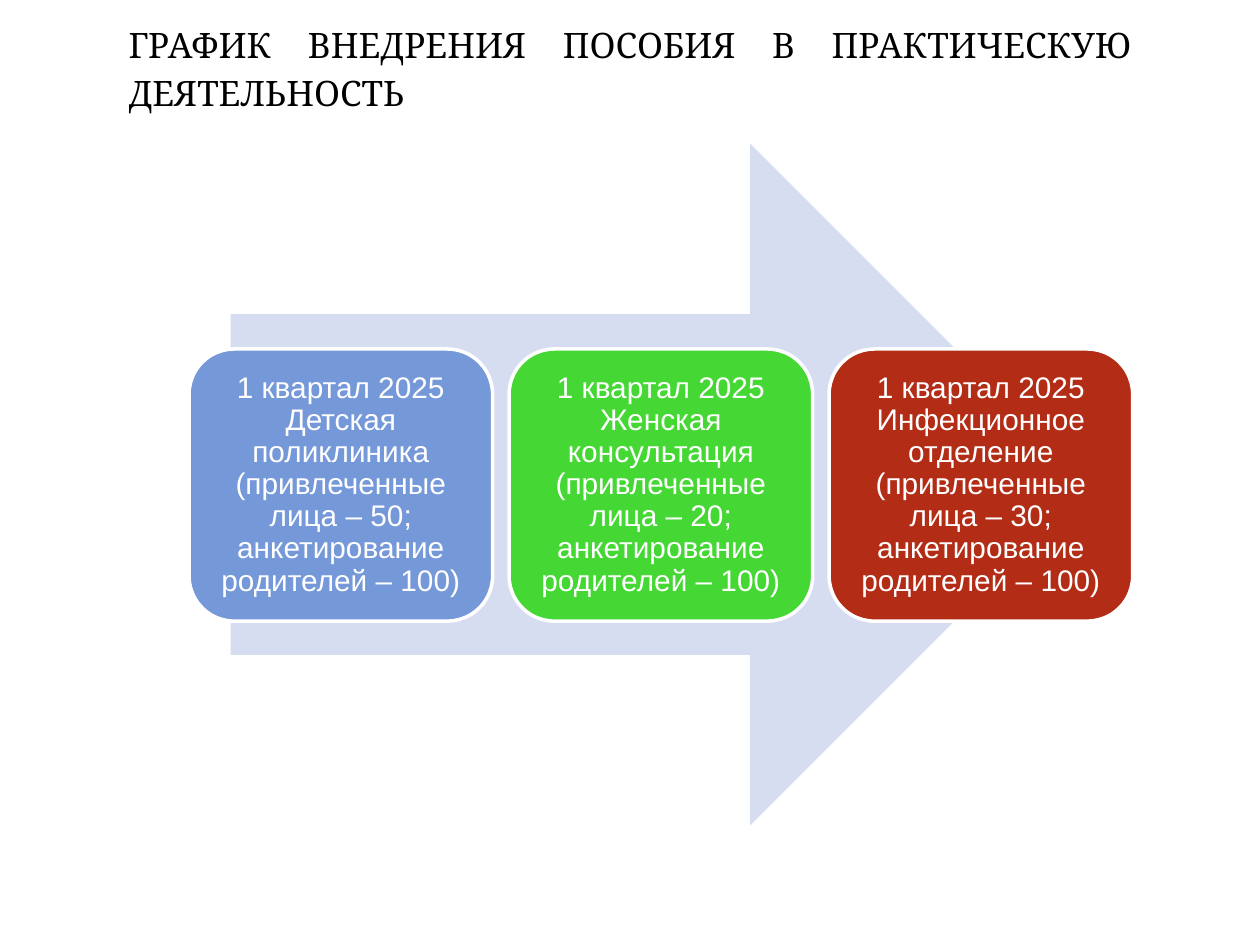
from dataclasses import dataclass

from pptx import Presentation
from pptx.dml.color import RGBColor
from pptx.enum.shapes import MSO_SHAPE as Geom
from pptx.enum.text import MSO_ANCHOR as Anchor, MSO_AUTO_SIZE as Fit, PP_ALIGN as Align
from pptx.shapes.autoshape import Shape
from pptx.slide import Slide
from pptx.text.text import TextFrame
from pptx.util import Pt

LEFT, TOP, WIDTH, HEIGHT = 108, 199.44, 173.52, 155.52
STEP = 182.88


@dataclass
class Stage:
    place: str
    people: int
    fill: str


STAGES = [
    Stage("Детская поликлиника", 50, "7598D9"),
    Stage("Женская консультация", 20, "45D834"),
    Stage("Инфекционное отделение", 30, "B32C16"),
]


def color(code: str) -> RGBColor:
    return RGBColor.from_string(code)


def write(frame: TextFrame, text: str, font: str, size: float, code: str,
          align: Align, space: float) -> None:
    frame.word_wrap = True
    frame.auto_size = Fit.NONE
    para = frame.paragraphs[0]
    para.alignment = align
    para.line_spacing = space
    run = para.add_run()
    run.text = text
    run.font.name = font
    run.font.size = Pt(size)
    run.font.color.rgb = color(code)


def add_title(slide: Slide, text: str) -> None:
    title = slide.shapes.title
    title.left, title.top = Pt(66.24), Pt(0)
    title.width, title.height = Pt(587.52), Pt(68.4)
    frame = title.text_frame
    frame.vertical_anchor = Anchor.BOTTOM
    write(frame, text, "Cambria", 20, "000000", Align.JUSTIFY, 1.15)
    frame.paragraphs[0].space_after = Pt(10)


def add_form(slide: Slide, geom: Geom, left: float, top: float,
             width: float, height: float, fill: str) -> Shape:
    form = slide.shapes.add_shape(geom, Pt(left), Pt(top), Pt(width), Pt(height))
    form.shadow.inherit = False
    form.fill.solid()
    form.fill.fore_color.rgb = color(fill)
    form.line.fill.background()
    return form


def add_stage(slide: Slide, index: int, stage: Stage) -> None:
    card = add_form(slide, Geom.ROUNDED_RECTANGLE, LEFT + index * STEP, TOP,
                    WIDTH, HEIGHT, stage.fill)
    card.line.color.rgb = color("FFFFFF")
    card.line.width = Pt(2)
    frame = card.text_frame
    frame.vertical_anchor = Anchor.MIDDLE
    frame.margin_left = frame.margin_right = Pt(5)
    frame.margin_top = frame.margin_bottom = Pt(5)
    text = (f"1 квартал 2025 {stage.place} (привлеченные лица – {stage.people}; "
            "анкетирование родителей – 100)")
    write(frame, text, "Arial", 17, "FFFFFF", Align.CENTER, 0.9)


def main() -> None:
    deck = Presentation()
    deck.slide_width, deck.slide_height = Pt(720), Pt(540)
    slide = deck.slides.add_slide(deck.slide_layouts[5])
    add_title(slide, "ГРАФИК ВНЕДРЕНИЯ ПОСОБИЯ В ПРАКТИЧЕСКУЮ ДЕЯТЕЛЬНОСТЬ")
    add_form(slide, Geom.RIGHT_ARROW, 131.76, 82.08, 491.76, 389.52, "D6DDF1")
    for index, stage in enumerate(STAGES):
        add_stage(slide, index, stage)
    deck.save("out.pptx")


if __name__ == "__main__":
    main()
